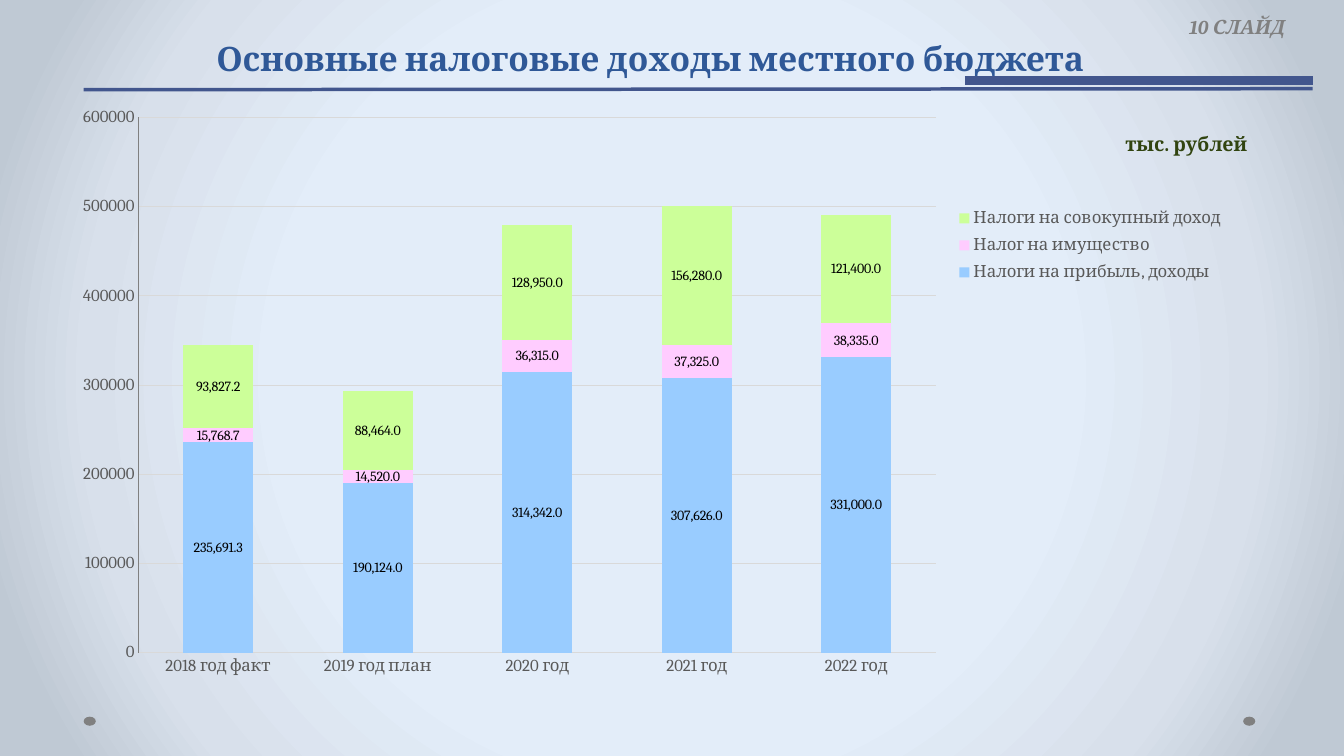
"""Build a slide with a stacked column chart of local budget tax revenue."""
from dataclasses import dataclass

from lxml import etree
from pptx import Presentation
from pptx.chart.data import CategoryChartData
from pptx.dml.color import RGBColor
from pptx.enum.chart import XL_CHART_TYPE, XL_LABEL_POSITION, XL_LEGEND_POSITION, XL_TICK_MARK
from pptx.enum.shapes import MSO_CONNECTOR, MSO_SHAPE
from pptx.enum.text import MSO_ANCHOR, PP_ALIGN
from pptx.oxml import parse_xml
from pptx.oxml.ns import qn
from pptx.util import Inches, Pt

STACKED = XL_CHART_TYPE.COLUMN_STACKED
LABEL_CENTER = XL_LABEL_POSITION.CENTER
LEGEND_RIGHT = XL_LEGEND_POSITION.RIGHT
NO_TICK = XL_TICK_MARK.NONE
STRAIGHT = MSO_CONNECTOR.STRAIGHT
ELLIPSE = MSO_SHAPE.OVAL
TOP, BOTTOM = MSO_ANCHOR.TOP, MSO_ANCHOR.BOTTOM
CENTER, RIGHT = PP_ALIGN.CENTER, PP_ALIGN.RIGHT


@dataclass(frozen=True)
class Theme:
    font: str = "Cambria"
    title: str = "2F5897"
    rule: str = "42568D"
    muted: str = "808080"
    unit: str = "314410"
    axis_text: str = "595959"
    grid: str = "D9D9D9"
    label: str = "000000"
    title_size: int = 24
    note_size: int = 14
    axis_size: int = 12
    label_size: int = 10
    backdrop: tuple = ((50, "E3EDF9"), (76, "D8E0EB"), (92, "BFC9D4"))


theme = Theme()


def style_font(font, size, color, bold=False, italic=False):
    font.name, font.size = theme.font, Pt(size)
    font.bold, font.italic = bold, italic
    font.color.rgb = RGBColor.from_string(color)


def manual_layout(x, y, w, h, inner=False):
    layout = etree.Element(qn("c:layout"))
    manual = etree.SubElement(layout, qn("c:manualLayout"))
    settings = [("layoutTarget", "inner")] if inner else []
    settings += [("xMode", "edge"), ("yMode", "edge"), ("x", x), ("y", y), ("w", w), ("h", h)]
    for tag, value in settings:
        etree.SubElement(manual, qn(f"c:{tag}")).set("val", str(value))
    return layout


prs = Presentation()
prs.slide_width, prs.slide_height = Inches(13.33), Inches(7.5)
slide = prs.slides.add_slide(prs.slide_layouts[6])

slide.background.fill.gradient()
gradient = slide.background.fill._fill._gradFill
stops = "".join(
    f'<a:gs pos="{position * 1000}"><a:srgbClr val="{color}"/></a:gs>'
    for position, color in theme.backdrop
)
gradient.getparent().replace(gradient, parse_xml(
    '<a:gradFill xmlns:a="http://schemas.openxmlformats.org/drawingml/2006/main" rotWithShape="1">'
    f'<a:gsLst>{stops}</a:gsLst><a:path path="circle">'
    '<a:fillToRect l="50000" t="50000" r="50000" b="50000"/></a:path></a:gradFill>'
))

for dot_left in (12.33, 0.83):
    dot = slide.shapes.add_shape(ELLIPSE, Inches(dot_left), Inches(7.11), Inches(0.12), Inches(0.09))
    dot.shadow.inherit = False
    dot.fill.solid()
    dot.fill.fore_color.rgb = RGBColor.from_string(theme.muted)
    dot.line.fill.background()

revenue = CategoryChartData(number_format="General")
revenue.categories = ["2018 год факт", "2019 год план", "2020 год", "2021 год", "2022 год"]
taxes = [
    ("Налоги на прибыль, доходы", "99CCFF", (235691.3, 190124, 314342, 307626, 331000)),
    ("Налог на имущество", "FFCCFF", (15768.7, 14520, 36315, 37325, 38335)),
    ("Налоги на совокупный доход", "CCFF99", (93827.2, 88464, 128950, 156280, 121400)),
]
for tax, _, amounts in taxes:
    revenue.add_series(tax, amounts)

chart = slide.shapes.add_chart(
    STACKED, Inches(0.56), Inches(0.93), Inches(11.63), Inches(5.9), revenue
).chart
chart.has_title = False
style_font(chart.font, theme.label_size, theme.label)

plot = chart.plots[0]
plot.gap_width, plot.overlap, plot.vary_by_categories = 127, 100, False
for series, (_, color, _) in zip(plot.series, taxes):
    series.format.fill.solid()
    series.format.fill.fore_color.rgb = RGBColor.from_string(color)
    labels = series.data_labels
    labels.show_value = True
    labels.number_format, labels.number_format_is_linked = "#,##0.0", False
    labels.position = LABEL_CENTER
    style_font(labels.font, theme.label_size, theme.label)

for axis, line_color in ((chart.category_axis, theme.grid), (chart.value_axis, theme.muted)):
    axis.major_tick_mark = axis.minor_tick_mark = NO_TICK
    axis.format.line.color.rgb = RGBColor.from_string(line_color)
    axis.format.line.width = Pt(1)
    style_font(axis.tick_labels.font, theme.axis_size, theme.axis_text)

amount_axis = chart.value_axis
amount_axis.minimum_scale, amount_axis.maximum_scale, amount_axis.major_unit = 0, 600000, 100000
amount_axis.tick_labels.number_format = "General"
amount_axis.tick_labels.number_format_is_linked = False
grid_line = amount_axis.major_gridlines.format.line
grid_line.color.rgb = RGBColor.from_string(theme.grid)
grid_line.width = Pt(0.75)

chart.has_legend = True
legend = chart.legend
legend.position, legend.include_in_layout = LEGEND_RIGHT, False
style_font(legend.font, theme.axis_size, theme.axis_text)

plot_area = chart._chartSpace.chart.plotArea
for holder in (plot_area, legend._element):
    for automatic in holder.findall(qn("c:layout")):
        holder.remove(automatic)
plot_area.insert(0, manual_layout(0.07, 0.04, 0.68, 0.9, inner=True))
legend._element.find(qn("c:overlay")).addprevious(manual_layout(0.77, 0.18, 0.23, 0.15))

captions = [
    ("Основные налоговые доходы местного бюджета", (1.95, 0.1, 9, 0.73),
     CENTER, BOTTOM, theme.title_size, theme.title, False, 58),
    ("10 СЛАЙД", (11.53, 0.1, 1.31, 0.34), RIGHT, TOP, theme.note_size, theme.muted, True, None),
    ("тыс. рублей", (10.74, 1.26, 1.73, 0.34), RIGHT, TOP, theme.note_size, theme.unit, False, None),
]
for wording, place, align, anchor, size, color, italic, spacing in captions:
    frame = slide.shapes.add_textbox(*map(Inches, place)).text_frame
    frame.word_wrap, frame.vertical_anchor = True, anchor
    frame.text = wording
    paragraph = frame.paragraphs[0]
    paragraph.alignment = align
    if spacing:
        paragraph.line_spacing = Pt(spacing)
    style_font(paragraph.runs[0].font, size, color, bold=True, italic=italic)

for left, start_y, end_y, width in ((0.83, 0.89, 0.88, 2.5), (9.57, 0.8, 0.8, 6)):
    rule = slide.shapes.add_connector(
        STRAIGHT, Inches(left), Inches(start_y), Inches(13.02), Inches(end_y)
    )
    rule.line.color.rgb = RGBColor.from_string(theme.rule)
    rule.line.width = Pt(width)
    etree.SubElement(rule._element.spPr, qn("a:effectLst"))

prs.save("out.pptx")
